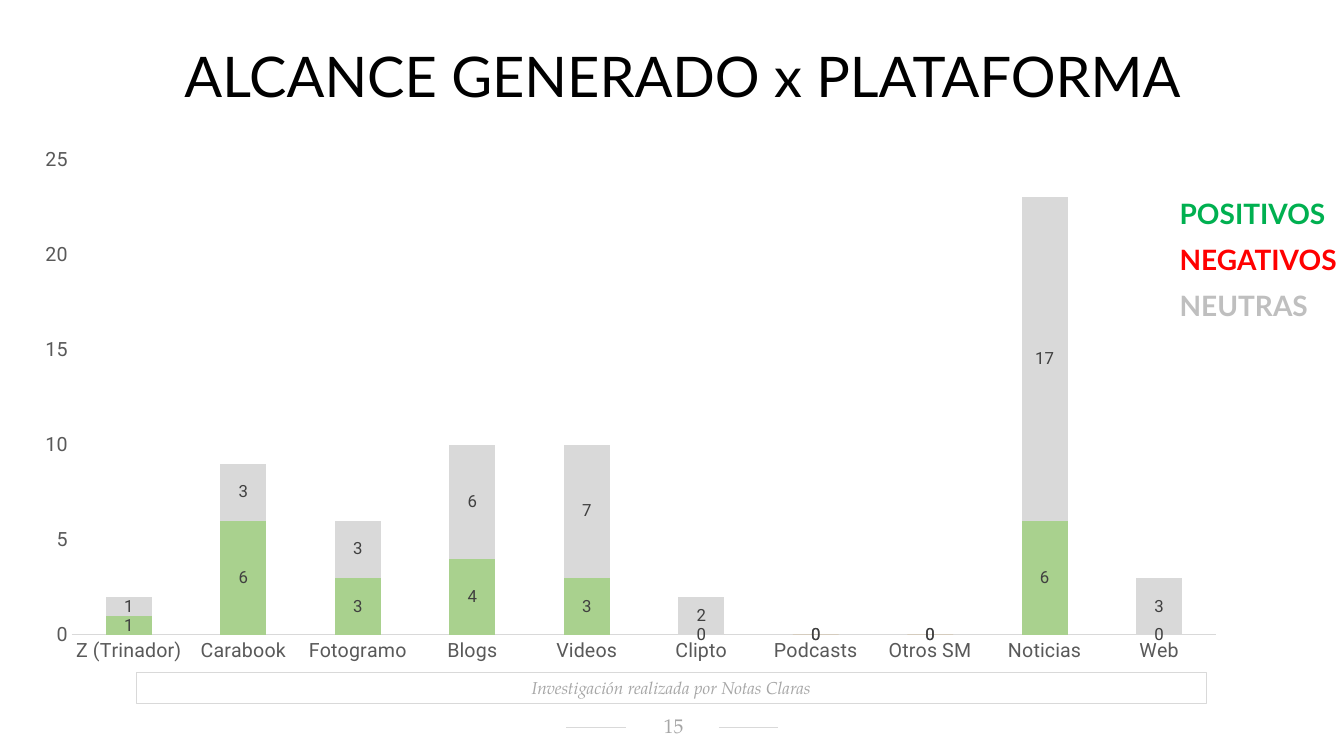
from dataclasses import dataclass

from lxml import etree
from pptx import Presentation
from pptx.chart.data import CategoryChartData
from pptx.dml.color import RGBColor
from pptx.enum.chart import XL_CHART_TYPE, XL_LABEL_POSITION, XL_TICK_MARK
from pptx.enum.shapes import MSO_CONNECTOR, MSO_SHAPE
from pptx.enum.text import MSO_ANCHOR, MSO_AUTO_SIZE, PP_ALIGN
from pptx.oxml.ns import qn
from pptx.util import Cm, Pt

STACKED = XL_CHART_TYPE.COLUMN_STACKED
LABEL_CENTER = XL_LABEL_POSITION.CENTER
NO_TICK = XL_TICK_MARK.NONE
STRAIGHT = MSO_CONNECTOR.STRAIGHT
RECTANGLE = MSO_SHAPE.RECTANGLE
MIDDLE, BOTTOM = MSO_ANCHOR.MIDDLE, MSO_ANCHOR.BOTTOM
FIXED_SIZE = MSO_AUTO_SIZE.NONE
LEFT, CENTER = PP_ALIGN.LEFT, PP_ALIGN.CENTER


@dataclass(frozen=True)
class Theme:
    heading: str = "Lato"
    chart: str = "Roboto"
    note: str = "TeX Gyre Pagella"
    black: str = "000000"
    rule: str = "D9D9D9"
    muted: str = "A6A6A6"
    axis: str = "595959"
    value: str = "404040"
    bars: tuple = ("A9D18E", "ED7D31", "D9D9D9")
    positive: str = "00B050"
    negative: str = "FF0000"
    neutral: str = "BFBFBF"
    title_size: float = 40
    legend_size: float = 20
    axis_size: float = 14
    value_size: float = 12
    note_size: float = 12.3
    number_size: float = 14.1


THEME = Theme()

PLATFORMS = ["Z (Trinador)", "Carabook", "Fotogramo", "Blogs", "Videos",
             "Clipto", "Podcasts", "Otros SM", "Noticias", "Web"]
REACH = [
    [1, 6, 3, 4, 3, 0, 0, 0, 6, 0],
    [0, 0, 0, 0, 0, 0, 0, 0, 0, 0],
    [1, 3, 3, 6, 7, 2, 0, 0, 17, 3],
]
LABELLED = (0, 2)
PLOT_AREA = {"x": 0.04, "y": 0.04, "w": 0.94, "h": 0.89}
LEGEND = [("POSITIVOS", THEME.positive), ("NEGATIVOS", THEME.negative),
          ("NEUTRAS", THEME.neutral)]


def apply(target, formats):
    for name, value in formats.items():
        setattr(target, name, value)


def style_font(font, face, size, color, **extra):
    apply(font, {"name": face, "size": Pt(size), **extra})
    font.color.rgb = RGBColor.from_string(color)


def style_line(line, color, width):
    line.color.rgb = RGBColor.from_string(color)
    line.width = Pt(width)


def write(shape, text, face, size, color, align=CENTER, anchor=MIDDLE,
          insets=(0.25, 0.13, 0.25, 0.13), spacing=1.0, **extra):
    frame = shape.text_frame
    sides = ("margin_left", "margin_top", "margin_right", "margin_bottom")
    apply(frame, {"word_wrap": True, "auto_size": FIXED_SIZE,
                  "vertical_anchor": anchor})
    apply(frame, dict(zip(sides, map(Cm, insets))))
    paragraph = frame.paragraphs[0]
    apply(paragraph, {"alignment": align, "line_spacing": spacing})
    run = paragraph.add_run()
    run.text = text
    style_font(run.font, face, size, color, **extra)


def add_title(slide, text):
    title = slide.shapes.title
    apply(title, {"left": Cm(0), "top": Cm(0.89),
                  "width": Cm(33.86), "height": Cm(2.03)})
    write(title, text, THEME.heading, THEME.title_size, THEME.black,
          anchor=BOTTOM, insets=(0.86, 0.18, 0.33, 0.18))


def add_text(slide, box, text, face, size, color, **layout):
    area = slide.shapes.add_textbox(*map(Cm, box))
    write(area, text, face, size, color, **layout)


def add_rule(slide, start, end, y):
    rule = slide.shapes.add_connector(STRAIGHT, Cm(start), Cm(y), Cm(end), Cm(y))
    style_line(rule.line, THEME.rule, 0.5)
    etree.SubElement(rule.element.spPr, qn("a:effectLst"))


def add_credit(slide, text):
    credit = slide.shapes.add_shape(RECTANGLE, Cm(3.43), Cm(16.94), Cm(26.97), Cm(0.79))
    credit.shadow.inherit = False
    credit.fill.background()
    style_line(credit.line, THEME.rule, 0.75)
    write(credit, text, THEME.note, THEME.note_size, THEME.muted, italic=True)


def place_plot(chart):
    plot_area = chart.element.find(".//" + qn("c:plotArea"))
    for automatic in plot_area.findall(qn("c:layout")):
        plot_area.remove(automatic)
    layout = etree.Element(qn("c:layout"))
    plot_area.insert(0, layout)
    manual = etree.SubElement(layout, qn("c:manualLayout"))
    settings = {"layoutTarget": "inner", "xMode": "edge", "yMode": "edge", **PLOT_AREA}
    for tag, value in settings.items():
        etree.SubElement(manual, qn("c:" + tag)).set("val", str(value))


def style_axes(chart):
    for axis in (chart.category_axis, chart.value_axis):
        apply(axis, {"major_tick_mark": NO_TICK, "minor_tick_mark": NO_TICK,
                     "has_major_gridlines": False})
        style_font(axis.tick_labels.font, THEME.chart, THEME.axis_size, THEME.axis)
    style_line(chart.category_axis.format.line, THEME.rule, 0.75)
    chart.value_axis.format.line.fill.background()
    apply(chart.value_axis, {"minimum_scale": 0, "maximum_scale": 25, "major_unit": 5})


def add_reach_chart(slide):
    data = CategoryChartData()
    data.categories = PLATFORMS
    for number, values in enumerate(REACH, 1):
        data.add_series(f"Series {number}", values)
    chart = slide.shapes.add_chart(
        STACKED, Cm(0.58), Cm(3.48), Cm(30.68), Cm(13.46), data).chart
    apply(chart, {"has_legend": False, "has_title": False})
    style_font(chart.font, THEME.chart, THEME.value_size, THEME.black)
    plot = chart.plots[0]
    apply(plot, {"gap_width": 150, "overlap": 100, "vary_by_categories": False})
    for index, (series, color) in enumerate(zip(plot.series, THEME.bars)):
        series.format.fill.solid()
        series.format.fill.fore_color.rgb = RGBColor.from_string(color)
        if index in LABELLED:
            labels = series.data_labels
            apply(labels, {"show_value": True, "position": LABEL_CENTER})
            style_font(labels.font, THEME.chart, THEME.value_size, THEME.value)
    style_axes(chart)
    place_plot(chart)


def main():
    deck = Presentation()
    apply(deck, {"slide_width": Cm(33.86), "slide_height": Cm(19.05)})
    slide = deck.slides.add_slide(deck.slide_layouts[5])
    for start in (14.27, 18.11):
        add_rule(slide, start, start + 1.5, 18.34)
    add_title(slide, "ALCANCE GENERADO x PLATAFORMA")
    add_reach_chart(slide)
    add_text(slide, (15.75, 18.03, 2.39, 0.58), "15", THEME.note,
             THEME.number_size, THEME.muted, insets=(0.3, 0.05, 0.25, 0.13))
    add_credit(slide, "Investigación realizada por Notas Claras")
    for row, (tone, color) in enumerate(LEGEND):
        add_text(slide, (29.31, 4.93 + 1.16 * row, 5.46, 1.04), tone,
                 THEME.heading, THEME.legend_size, color, align=LEFT,
                 insets=(0.41, 0.18, 0.36, 0.18), spacing=0.8, bold=True)
    deck.save("out.pptx")


if __name__ == "__main__":
    main()
